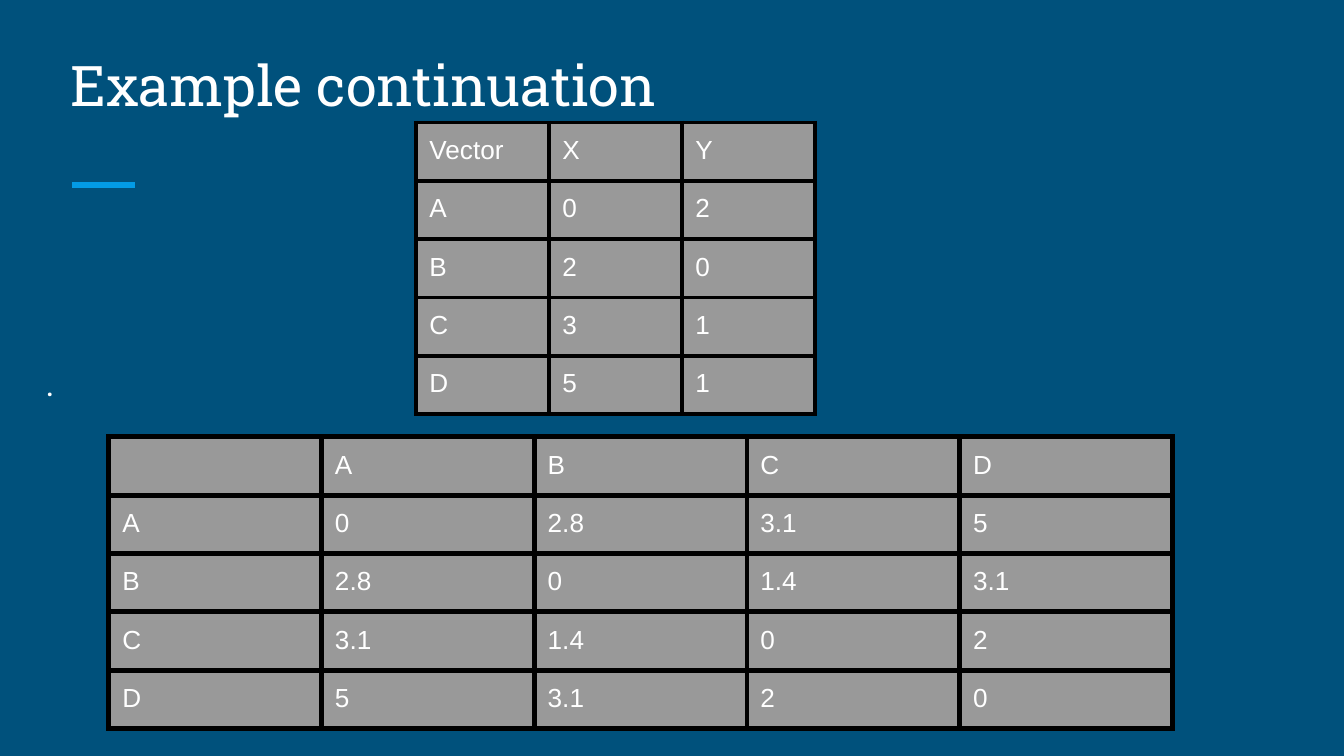
from dataclasses import dataclass

from lxml.etree import SubElement
from pptx import Presentation
from pptx.dml.color import RGBColor as Rgb
from pptx.enum.shapes import MSO_CONNECTOR as Link
from pptx.enum.text import MSO_ANCHOR as Anchor
from pptx.oxml.ns import qn
from pptx.util import Emu, Inches, Pt


@dataclass(frozen=True)
class Theme:
    back: str = "00517C"
    ink: str = "FFFFFF"
    accent: str = "039BE5"
    cell: str = "999999"
    edge: str = "000000"
    head: str = "Roboto Slab"
    body: str = "Roboto"
    grid: str = "Arial"
    title: int = 30
    text: int = 18
    small: int = 14
    rule: int = 3


@dataclass(frozen=True)
class Box:
    """A place in percent of the slide's width and height."""
    x: float
    y: float
    w: float
    h: float


@dataclass(frozen=True)
class Grid:
    """A table: place, column, first row and row in percent, border in points."""
    x: float
    y: float
    col: float
    first: float
    row: float
    edge: float
    rows: list[list[str]]


THEME = Theme()
WIDE = Inches(10)
HIGH = Emu(WIDE * 9 // 16)
PAD = Inches(0.1)

POINTS = Grid(30.95, 16.2, 9.9, 7.7, 7.7, 2.25, [
    ["Vector", "X", "Y"],
    ["A", "0", "2"],
    ["B", "2", "0"],
    ["C", "3", "1"],
    ["D", "5", "1"],
])
GAPS = Grid(8.1, 57.8, 15.83, 6.04, 7.44, 3, [
    ["", "A", "B", "C", "D"],
    ["A", "0", "2.8", "3.1", "5"],
    ["B", "2.8", "0", "1.4", "3.1"],
    ["C", "3.1", "1.4", "0", "2"],
    ["D", "5", "3.1", "2", "0"],
])


def across(share: float) -> Emu:
    return Emu(round(WIDE * share / 100))


def down(share: float) -> Emu:
    return Emu(round(HIGH * share / 100))


def write(frame, text: str, *, font: str, size: int,
          space: float | None = None) -> None:
    para = frame.paragraphs[0]
    para.line_spacing = space
    if not text:
        # An empty cell still takes its row height from the font.
        end = SubElement(para._p, qn("a:endParaRPr"), sz=str(size * 100))
        SubElement(end, qn("a:latin"), typeface=font)
        return
    run = para.add_run()
    run.text = text
    run.font.name = font
    run.font.size = Pt(size)
    run.font.color.rgb = Rgb.from_string(THEME.ink)


def add_text(slide, box: Box, text: str, anchor: Anchor, **form) -> None:
    shape = slide.shapes.add_textbox(
        across(box.x), down(box.y), across(box.w), down(box.h))
    frame = shape.text_frame
    frame.word_wrap = True
    frame.vertical_anchor = anchor
    frame.margin_left = frame.margin_right = PAD
    frame.margin_top = frame.margin_bottom = PAD
    write(frame, text, **form)


def add_rule(slide, x: float, y: float, w: float) -> None:
    rule = slide.shapes.add_connector(
        Link.STRAIGHT, across(x), down(y), across(x + w), down(y))
    rule.line.color.rgb = Rgb.from_string(THEME.accent)
    rule.line.width = Pt(THEME.rule)
    SubElement(rule._element.spPr, qn("a:effectLst"))


def style(cell, edge: float) -> None:
    """Set padding, borders and fill; borders come before the fill in XML."""
    cell.margin_left = cell.margin_right = PAD
    cell.margin_top = cell.margin_bottom = PAD
    props = cell._tc.get_or_add_tcPr()
    for side in ("lnL", "lnR", "lnT", "lnB"):
        line = SubElement(props, qn(f"a:{side}"), w=str(Pt(edge)))
        fill = SubElement(line, qn("a:solidFill"))
        SubElement(fill, qn("a:srgbClr"), val=THEME.edge)
    cell.fill.solid()
    cell.fill.fore_color.rgb = Rgb.from_string(THEME.cell)


def add_grid(slide, grid: Grid) -> None:
    tall, wide = len(grid.rows), len(grid.rows[0])
    table = slide.shapes.add_table(
        tall, wide, across(grid.x), down(grid.y),
        across(grid.col * wide), down(grid.row * tall)).table
    for col in table.columns:
        col.width = across(grid.col)
    for i, (row, words) in enumerate(zip(table.rows, grid.rows)):
        row.height = down(grid.row if i else grid.first)
        for cell, word in zip(row.cells, words):
            style(cell, grid.edge)
            write(cell.text_frame, word, font=THEME.grid, size=THEME.small)


def main() -> None:
    deck = Presentation()
    deck.slide_width, deck.slide_height = WIDE, HIGH
    slide = deck.slides.add_slide(deck.slide_layouts[6])
    back = slide.background.fill
    back.solid()
    back.fore_color.rgb = Rgb.from_string(THEME.back)

    add_rule(slide, 5.36, 24.5, 4.68)
    add_text(slide, Box(4.25, 4.1, 91.5, 13.3), "Example continuation",
             Anchor.BOTTOM, font=THEME.head, size=THEME.title)
    add_text(slide, Box(2.4, 45.4, 91.5, 59.9), ".",
             Anchor.TOP, font=THEME.body, size=THEME.text, space=1.15)
    for grid in (POINTS, GAPS):
        add_grid(slide, grid)
    deck.save("out.pptx")


if __name__ == "__main__":
    main()
